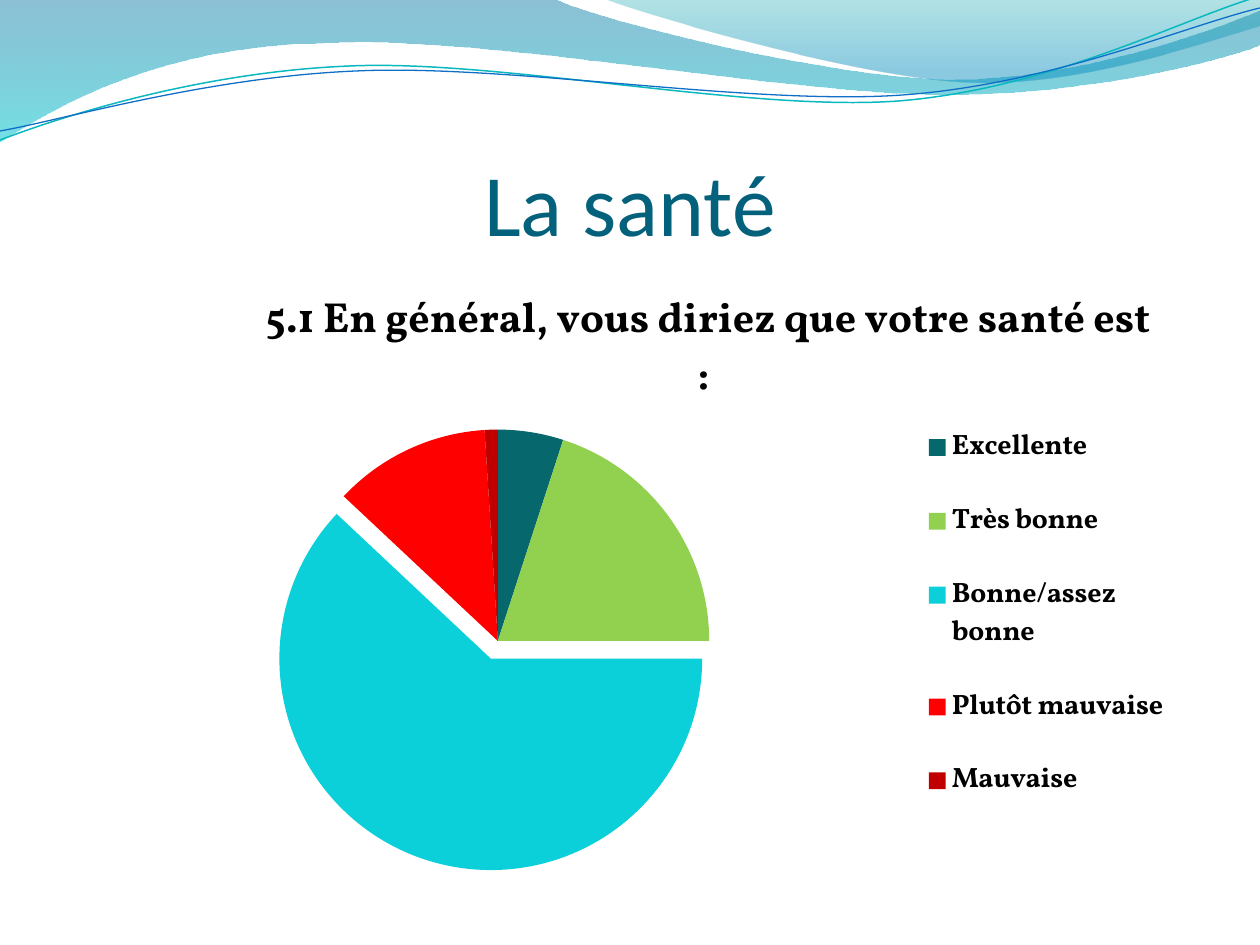
from lxml import etree
from pptx import Presentation
from pptx import util as u
from pptx.chart.data import CategoryChartData
from pptx.dml.color import RGBColor
from pptx.enum import chart as ch, text
from pptx.oxml import parse_xml
from pptx.oxml.ns import nsdecls, qn

PX = 914400 / 126
W, H = 1260, 945

BLUE, CYAN = RGBColor(0x00, 0x74, 0xA1), RGBColor(0x00, 0xC6, 0xCF)
TEAL, SKY = RGBColor(0x00, 0xA1, 0xA9), RGBColor(0x00, 0x8B, 0xBF)
LINE_TEAL, LINE_BLUE = RGBColor(0x0A, 0xB8, 0xBF), RGBColor(0x0F, 0x6F, 0xC6)
TITLE, BLACK = RGBColor(0x04, 0x61, 0x7B), RGBColor(0, 0, 0)

HEADING = "La santé"
QUESTION = "5.1 En général, vous diriez que votre santé est : "
ANSWERS = [
    ("Excellente", 5, RGBColor(0x06, 0x68, 0x6C)),
    ("Très bonne", 20, RGBColor(0x92, 0xD0, 0x50)),
    ("Bonne/assez bonne", 62, RGBColor(0x0B, 0xD0, 0xD9)),
    ("Plutôt mauvaise", 12, RGBColor(0xFF, 0x00, 0x00)),
    ("Mauvaise", 1, RGBColor(0xC0, 0x00, 0x00)),
]
EXPLODED, EXPLOSION = 2, 9
TITLE_BOX = (63, 97, 1134, 157)
CHART_BOX = (63, 267, 1134, 605)
QUESTION_AT = (258, 281)
PIE_BOX = (286, 430, 423, 423)
LEGEND_BOX = (913, 393, 265, 443)

BANDS = [
    ([(0, 0), (554, -1), (600, 21, 837, 79, 955, 79),
      (1075, 79, 1207, 33, 1260, 11), (1261, 45),
      (1238, 55, 1096, 96, 940, 94), (784, 94, 481, 35, 324, 43),
      (163, 45, 58, 105, -1, 142)],
     [(0, BLUE, 45), (1, CYAN, 55)]),
    ([(604, -1), (641, 14, 859, 78, 969, 82),
      (1079, 87, 1211, 40, 1260, 26), (1260, 0)],
     [(0, TEAL, 30), (0.8, SKY, 45)]),
]
STROKES = [
    ([(0, 140), (60, 117, 199, 72, 349, 66), (498, 59, 747, 112, 898, 101),
      (1050, 89, 1182, 19, 1257, -3)], LINE_TEAL, 0.85),
    ([(0, 131), (59, 121, 207, 77, 357, 71), (508, 64, 752, 106, 903, 95),
      (1053, 84, 1185, 26, 1260, 8)], LINE_BLUE, 0.75),
]


def emu(box):
    return [u.Emu(round(v * PX)) for v in box]


def add_wave(s, segments, close):
    pts = [emu(seg[i:i + 2]) for seg in segments for i in range(0, len(seg), 2)]
    fb = s.shapes.build_freeform(*pts[0])
    fb.add_line_segments(pts[1:], close=close)
    sp = fb.convert_to_shape()
    sp.shadow.inherit = False
    lines = iter(list(sp._element.iter(qn("a:lnTo"))))
    for seg in segments[1:]:
        first = next(lines)
        if len(seg) == 6:
            curve = etree.Element(qn("a:cubicBezTo"))
            first.addprevious(curve)
            for ln in (first, next(lines), next(lines)):
                curve.append(ln[0])
                ln.getparent().remove(ln)
    return sp


def add_band(s, segments, stops):
    sp = add_wave(s, segments, True)
    sp.line.fill.background()
    sp.fill.gradient()
    sp.fill.gradient_angle = 270
    for stop, (pos, color, opacity) in zip(sp.fill.gradient_stops, stops):
        stop.position = pos
        stop.color.rgb = color
        clr = stop._gs.find(qn("a:srgbClr"))
        etree.SubElement(clr, qn("a:alpha")).set("val", str(opacity * 1000))


def add_stroke(s, segments, color, width):
    sp = add_wave(s, segments, False)
    sp.fill.background()
    sp.line.color.rgb = color
    sp.line.width = u.Pt(width)


def set_font(font, name, size, color, bold=False):
    font.name, font.size, font.bold = name, u.Pt(size), bold
    font.color.rgb = color


def place(parent, box, before=None, after=None, inner=False):
    left, top, width, height = CHART_BOX
    parts = zip("xywh", box, (left, top, 0, 0), (width, height) * 2)
    sizes = "".join(f'<c:{k} val="{(v - o) / d:.3f}"/>' for k, v, o, d in parts)
    target = '<c:layoutTarget val="inner"/>' if inner else ""
    layout = parse_xml(
        f'<c:layout {nsdecls("c")}><c:manualLayout>{target}<c:xMode val="edge"/>'
        f'<c:yMode val="edge"/>{sizes}</c:manualLayout></c:layout>')
    for old in parent.findall(qn("c:layout")):
        parent.remove(old)
    if after:
        parent.find(qn(after)).addnext(layout)
    else:
        parent.find(qn(before)).addprevious(layout)


def add_title(s):
    sp = s.shapes.title
    sp.left, sp.top, sp.width, sp.height = emu(TITLE_BOX)
    tf = sp.text_frame
    tf.word_wrap = True
    tf.vertical_anchor = text.MSO_ANCHOR.BOTTOM
    tf.margin_left = tf.margin_right = tf.margin_bottom = 0
    p = tf.paragraphs[0]
    p.alignment = text.PP_ALIGN.CENTER
    r = p.add_run()
    r.text = HEADING
    set_font(r.font, "Calibri", 50, TITLE)
    s.shapes._spTree.append(sp._element)


def add_pie(s):
    data = CategoryChartData()
    data.categories = [name for name, _, _ in ANSWERS]
    data.add_series("Series 1", [value for _, value, _ in ANSWERS])
    chart = s.shapes.add_chart(ch.XL_CHART_TYPE.PIE, *emu(CHART_BOX), data).chart
    set_font(chart.font, "Vollkorn", 10, BLACK)

    chart.has_title = True
    p = chart.chart_title.text_frame.paragraphs[0]
    r = p.add_run()
    r.text = QUESTION
    set_font(r.font, "Vollkorn", 24, BLACK, True)
    place(chart.chart_title._element, QUESTION_AT, after="c:tx")

    plot = chart.plots[0]
    plot.vary_by_categories = True
    for i, (_, _, color) in enumerate(ANSWERS):
        fmt = plot.series[0].points[i].format
        fmt.fill.solid()
        fmt.fill.fore_color.rgb = color
        fmt.line.fill.background()
    dpt = plot.series[0]._element.findall(qn("c:dPt"))[EXPLODED]
    dpt.find(qn("c:spPr")).addprevious(
        parse_xml(f'<c:explosion {nsdecls("c")} val="{EXPLOSION}"/>'))
    place(plot._element.getparent(), PIE_BOX, before="c:pieChart", inner=True)

    chart.has_legend = True
    legend = chart.legend
    legend.position = ch.XL_LEGEND_POSITION.RIGHT
    legend.include_in_layout = False
    set_font(legend.font, "Vollkorn", 16, BLACK, True)
    place(legend._element, LEGEND_BOX, after="c:legendPos")


def main():
    prs = Presentation()
    prs.slide_width, prs.slide_height = emu((W, H))
    s = prs.slides.add_slide(prs.slide_layouts[5])
    for band in BANDS:
        add_band(s, *band)
    for stroke in STROKES:
        add_stroke(s, *stroke)
    add_title(s)
    add_pie(s)
    prs.save("out.pptx")


if __name__ == "__main__":
    main()
